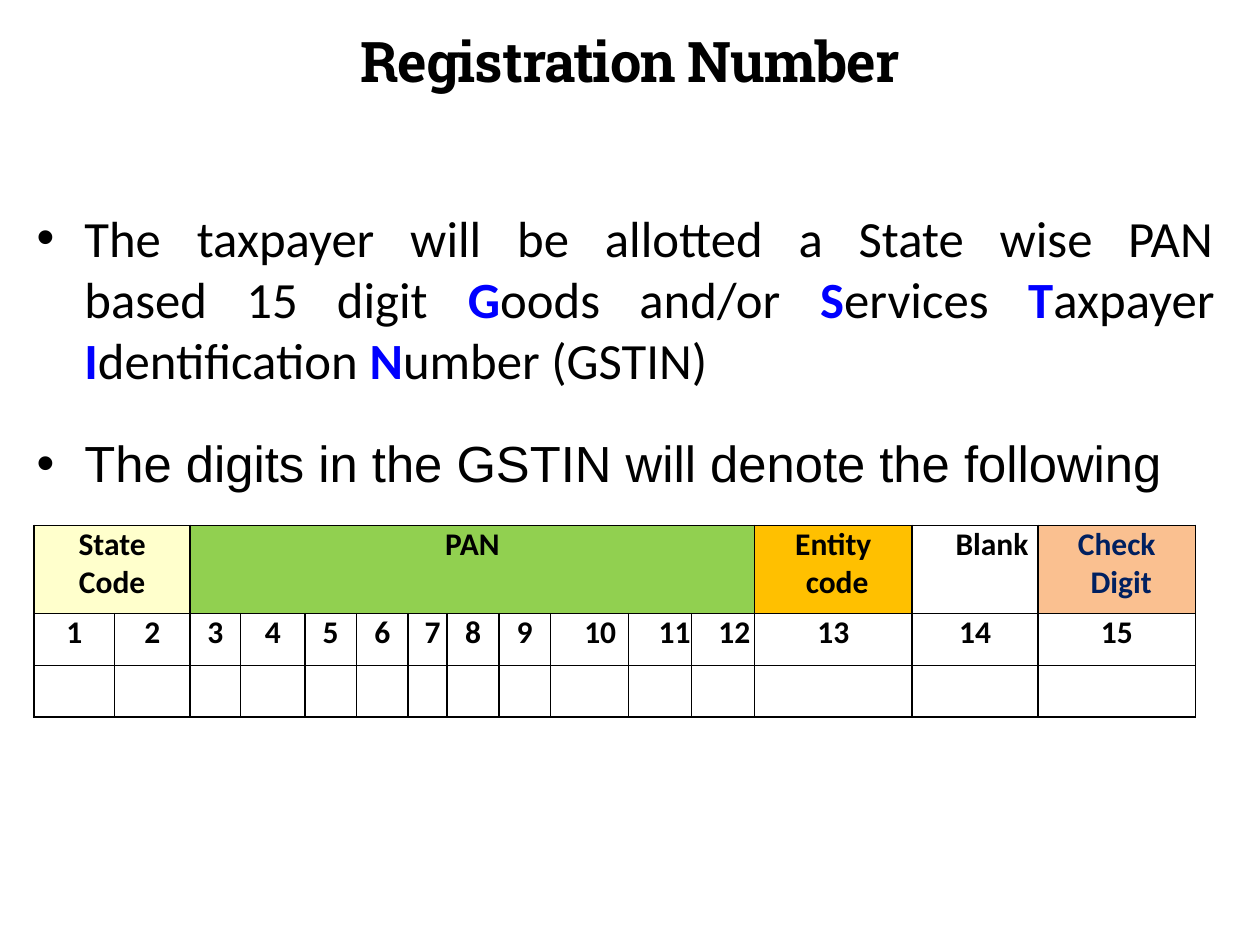
import pptx
import pptx.util
import pptx.dml.color
import pptx.enum.text
import pptx.oxml.ns
import lxml.etree

WIDTH, HEIGHT = 10, 7.5
BLACK, BLUE, NAVY = "000000", "0000FF", "002060"
ALIGN = pptx.enum.text.PP_ALIGN
ANCHOR = pptx.enum.text.MSO_ANCHOR

TITLE = "Registration Number"
GSTIN_MEANING = [
    ("The  taxpayer  will  be  allotted  a  State  wise  PAN based  15  digit  ", False),
    ("G", True), ("oods  and/or  ", False),
    ("S", True), ("ervices  ", False),
    ("T", True), ("axpayer ", False),
    ("I", True), ("dentification ", False),
    ("N", True), ("umber (GSTIN)", False),
]
DIGITS_INTRO = "The digits in the GSTIN will denote the following"

DIGIT_WIDTHS = [0.64, 0.6, 0.4, 0.51, 0.41, 0.41, 0.31, 0.41, 0.41,
                0.62, 0.5, 0.5, 1.25, 1, 1.25]
ROW_HEIGHTS = [0.7, 0.41, 0.41]
DIGIT_INDENTS = {7: 0.08, 10: 0.17, 11: 0.23, 12: 0.18}
PARTS = [
    {"label": "State Code", "digits": 2, "fill": "FFFFCC", "left": 0.35, "right": 0.35},
    {"label": "PAN", "digits": 10, "fill": "91D050"},
    {"label": "Entity code", "digits": 1, "fill": "FFC000",
     "left": 0.36, "right": 0.3, "first": -0.06},
    {"label": "Blank", "digits": 1, "left": 0.27},
    {"label": "Check Digit", "digits": 1, "fill": "FAC090", "color": NAVY,
     "left": 0.37, "right": 0.3, "first": -0.07},
]


def inches(value):
    return pptx.util.Inches(value)


def rgb(value):
    return pptx.dml.color.RGBColor.from_string(value)


def add_child(parent, tag, **attributes):
    return lxml.etree.SubElement(parent, pptx.oxml.ns.qn(tag), attributes)


def apply(target, values):
    for name, value in values.items():
        setattr(target, name, value)


def add_run(paragraph, words, size, font, color=BLACK, bold=False):
    run = paragraph.add_run()
    run.text = words
    apply(run.font, {"size": pptx.util.Pt(size), "name": font, "bold": bold})
    run.font.color.rgb = rgb(color)
    return run


def indent(paragraph, left=0, right=0, first=0):
    properties = paragraph._p.get_or_add_pPr()
    for name, value in {"marL": left, "marR": right, "indent": first}.items():
        properties.set(name, str(inches(value)))
    return properties


def add_bullet(paragraph):
    properties = indent(paragraph, left=0.39, first=-0.38)
    add_child(properties, "a:buFont", typeface="Arial")
    add_child(properties, "a:buChar", char="•")


def add_frame(slide, left, top, width, height, margin=0, anchor=ANCHOR.TOP):
    frame = slide.shapes.add_textbox(*map(inches, (left, top, width, height))).text_frame
    apply(frame, {"word_wrap": True, "vertical_anchor": anchor,
                  "margin_left": inches(margin), "margin_right": inches(margin),
                  "margin_top": inches(margin / 2), "margin_bottom": inches(margin / 2)})
    return frame


def style_cell(cell, fill=None):
    apply(cell, dict.fromkeys(
        ("margin_left", "margin_right", "margin_top", "margin_bottom"), 0))
    properties = cell._tc.get_or_add_tcPr()
    for side in ("a:lnL", "a:lnR", "a:lnT", "a:lnB"):
        border = add_child(properties, side, w=str(pptx.util.Pt(1)))
        add_child(add_child(border, "a:solidFill"), "a:srgbClr", val=BLACK)
    if fill:
        cell.fill.solid()
        cell.fill.fore_color.rgb = rgb(fill)
    else:
        cell.fill.background()


def label_cell(cell, words, color=BLACK, left=0, right=0, first=0):
    paragraph = cell.text_frame.paragraphs[0]
    paragraph.alignment = ALIGN.CENTER
    indent(paragraph, left, right, first)
    add_run(paragraph, words, 18, "Calibri", color, True)


def add_title(slide):
    frame = add_frame(slide, 0.21, 0.21, WIDTH - 2 * 0.21, 0.54, 0.1, ANCHOR.MIDDLE)
    heading = frame.paragraphs[0]
    heading.alignment = ALIGN.CENTER
    run = add_run(heading, TITLE, 32, "Roboto Slab", bold=True)
    run.font._element.set("spc", "-60")


def add_points(slide):
    frame = add_frame(slide, 0.28, 1.64, 9.36, 2.29)
    meaning = frame.paragraphs[0]
    meaning.alignment = ALIGN.JUSTIFY
    add_bullet(meaning)
    for words, initial in GSTIN_MEANING:
        add_run(meaning, words, 29, "Calibri", BLUE if initial else BLACK, initial)
    intro = frame.add_paragraph()
    intro.space_before = pptx.util.Pt(24.4)
    add_bullet(intro)
    add_run(intro, DIGITS_INTRO, 29, "Arial")


def add_digits_table(slide):
    table = slide.shapes.add_table(
        len(ROW_HEIGHTS), len(DIGIT_WIDTHS), inches(0.27), inches(4.17),
        inches(sum(DIGIT_WIDTHS)), inches(sum(ROW_HEIGHTS))).table
    apply(table, {"first_row": False, "horz_banding": False})
    for column, width in zip(table.columns, DIGIT_WIDTHS):
        column.width = inches(width)
    for row, height in zip(table.rows, ROW_HEIGHTS):
        row.height = inches(height)

    start = 0
    for part in PARTS:
        end = start + part["digits"]
        for column in range(start, end):
            style_cell(table.cell(0, column), part.get("fill"))
        header = table.cell(0, start)
        if part["digits"] > 1:
            header.merge(table.cell(0, end - 1))
        layout = {key: part[key] for key in ("color", "left", "right", "first") if key in part}
        label_cell(header, part["label"], **layout)
        start = end

    for column in range(len(DIGIT_WIDTHS)):
        digit = column + 1
        for row in (1, 2):
            style_cell(table.cell(row, column))
        label_cell(table.cell(1, column), str(digit), left=DIGIT_INDENTS.get(digit, 0))


def main():
    deck = pptx.Presentation()
    apply(deck, {"slide_width": inches(WIDTH), "slide_height": inches(HEIGHT)})
    slide = deck.slides.add_slide(deck.slide_layouts[6])
    add_points(slide)
    add_digits_table(slide)
    add_title(slide)
    deck.save("out.pptx")


if __name__ == "__main__":
    main()
